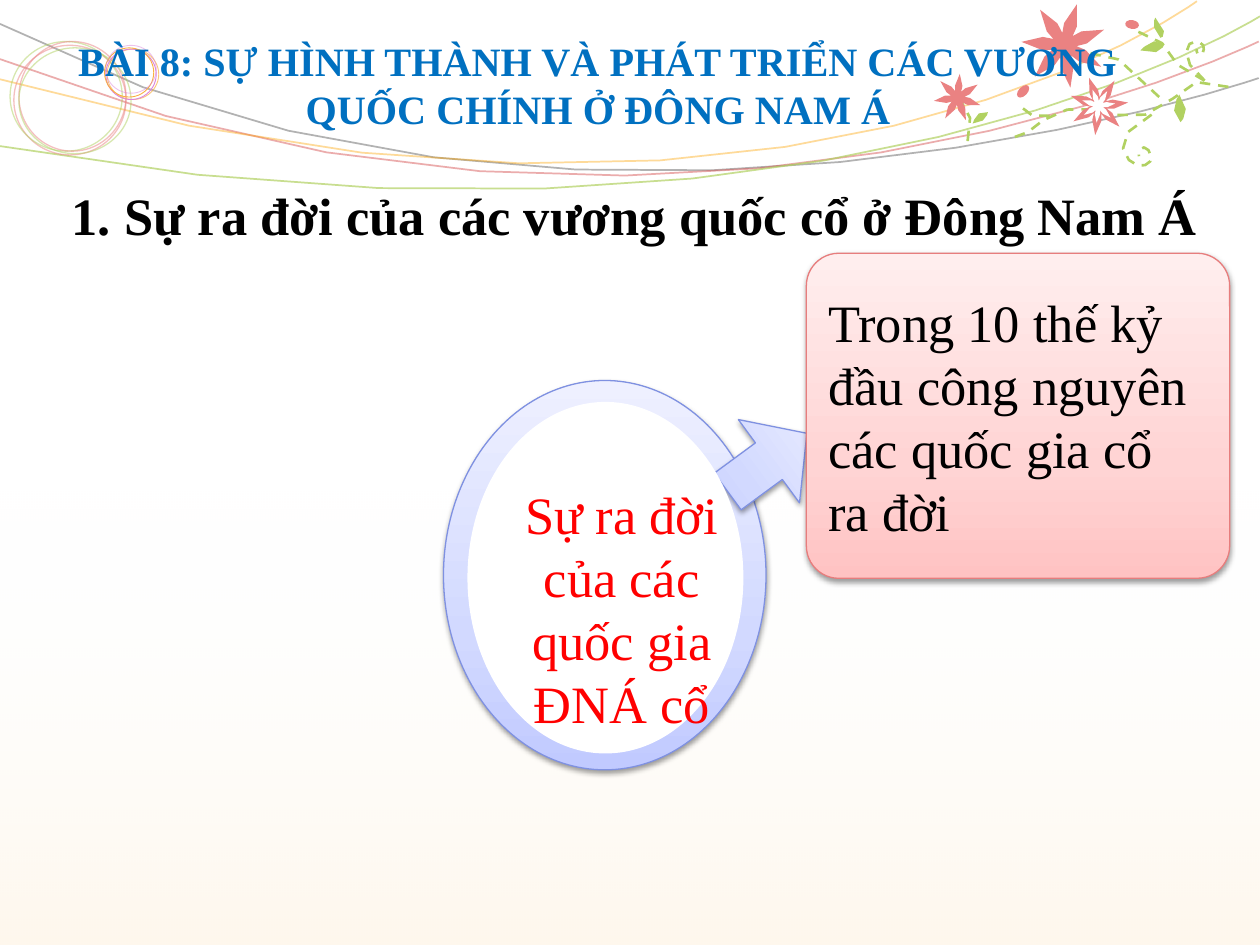
import math
import pptx
import pptx.util
import pptx.dml.color
import pptx.enum.dml
import pptx.enum.shapes
import pptx.enum.text
import pptx.oxml
import pptx.oxml.ns

COLORS = {
    "white": "FFFFFF", "black": "000000", "red": "FF0000", "title": "0070C0",
    "green": "B1D161", "coral": "EA8282", "rose": "D85A5A", "gray": "B2B2B2",
    "amber": "FEA300", "orange": "F9AF41", "violet": "DB85DB",
    "blue_edge": "7F91E1", "pink_edge": "E77D7D",
}
BLUE_STOPS = [(0, "C1CAFF", 100), (35, "D2D9FF", 100), (100, "EEF0FF", 100)]
PINK_STOPS = [(0, "FFC3C3", 100), (35, "FFD4D4", 100), (100, "FFEEEE", 100)]
UPWARD = '<a:lin ang="16200000" scaled="0"/>'
DOWNWARD = '<a:lin ang="5400000" scaled="0"/>'
FROM_CORNER = '<a:path path="rect"><a:fillToRect l="100000" b="100000"/></a:path>'
NS = 'xmlns:a="http://schemas.openxmlformats.org/drawingml/2006/main"'
SHAPE = pptx.enum.shapes.MSO_SHAPE
ALIGN = pptx.enum.text.PP_ALIGN
ANCHOR = pptx.enum.text.MSO_ANCHOR

deck = pptx.Presentation()
deck.slide_width = pptx.util.Inches(10)
deck.slide_height = pptx.util.Inches(7.5)
slide = deck.slides.add_slide(deck.slide_layouts[6])

# Grid of 100 columns by 75 rows
COL = deck.slide_width / 100
ROW = deck.slide_height / 75


def style(shape, fill=None, line=None, width=1, opacity=100, dashed=False,
          direction=UPWARD, shadow=False):
    """Fill is a colour name, a list of gradient stops, or None."""
    shape.shadow.inherit = False
    properties = shape._element.spPr
    if isinstance(fill, str):
        shape.fill.solid()
        shape.fill.fore_color.rgb = pptx.dml.color.RGBColor.from_string(COLORS[fill])
    else:
        shape.fill.background()
    if isinstance(fill, list):
        stops = "".join(
            f'<a:gs pos="{pos * 1000}"><a:srgbClr val="{color}">'
            f'<a:alpha val="{alpha * 1000}"/></a:srgbClr></a:gs>'
            for pos, color, alpha in fill)
        gradient = pptx.oxml.parse_xml(
            f'<a:gradFill {NS} rotWithShape="1"><a:gsLst>{stops}</a:gsLst>{direction}</a:gradFill>')
        properties.replace(properties.find(pptx.oxml.ns.qn("a:noFill")), gradient)
    if line:
        shape.line.width = pptx.util.Pt(width)
        shape.line.color.rgb = pptx.dml.color.RGBColor.from_string(COLORS[line])
        if dashed:
            shape.line.dash_style = pptx.enum.dml.MSO_LINE.DASH
        if opacity < 100:
            tint = shape.line._ln.find(".//" + pptx.oxml.ns.qn("a:srgbClr"))
            tint.append(pptx.oxml.parse_xml(f'<a:alpha {NS} val="{opacity * 1000}"/>'))
    else:
        shape.line.fill.background()
    if shadow:
        properties.find(pptx.oxml.ns.qn("a:effectLst")).append(pptx.oxml.parse_xml(
            f'<a:outerShdw {NS} blurRad="40000" dist="20000" dir="5400000" rotWithShape="0">'
            f'<a:srgbClr val="{COLORS["black"]}"><a:alpha val="38000"/></a:srgbClr></a:outerShdw>'))
    return shape


def draw_curve(knots, steps, closed=False, **look):
    """Knots are a start point, then three points for each cubic span."""
    trace = []
    for i in range(0, len(knots) - 1, 3):
        for step in range(1, steps + 1):
            t = step / steps
            weights = ((1 - t) ** 3, 3 * t * (1 - t) ** 2, 3 * t * t * (1 - t), t ** 3)
            span = list(zip(weights, knots[i:i + 4]))
            trace.append((round(sum(w * x for w, (x, y) in span) * COL),
                          round(sum(w * y for w, (x, y) in span) * ROW)))
    builder = slide.shapes.build_freeform(round(knots[0][0] * COL), round(knots[0][1] * ROW))
    builder.add_line_segments(trace, close=closed)
    return style(builder.convert_to_shape(), **look)


# Background washes
for top, wide, high, stops, direction in [
        (0, 80.8, 33.3, [(0, COLORS["green"], 20), (100, COLORS["white"], 0)], FROM_CORNER),
        (38.3, 100, 36.7, [(0, COLORS["white"], 0), (100, COLORS["orange"], 10)], DOWNWARD)]:
    wash = slide.shapes.add_shape(SHAPE.RECTANGLE, 0, round(top * ROW),
                                  round(wide * COL), round(high * ROW))
    style(wash, stops, direction=direction)
    if direction == FROM_CORNER:
        wash._element.spPr.xfrm.set("flipH", "1")

# Sweeping lines
for start, bend, end, color, opacity in [
        ((0, 1.9), (44.6, 25.4), (99.9, 6.2), "gray", 100),
        ((0, 4.7), (53.3, 26.3), (99.9, 3.3), "rose", 50),
        ((0, 6.3), (62.5, 24.4), (95, 0.1), "amber", 40),
        ((0, 11.6), (65.3, 23.4), (100, 1.3), "green", 70)]:
    draw_curve([start, bend, end, end], 12, line=color, opacity=opacity)

# Rings at the left
for left, top, wide, high, color, width, opacity in [
        (1.1, 3.6, 8.9, 8.7, "coral", 0.75, 50), (0.8, 3.3, 8.9, 8.7, "green", 0.75, 50),
        (1.5, 3.3, 8.5, 8.7, "coral", 0.75, 50), (1.5, 3.8, 8.9, 8.4, "green", 0.75, 50),
        (8.5, 3.9, 4.1, 4, "orange", 0.5, 70), (8.4, 3.9, 4, 4, "violet", 0.5, 100),
        (8.3, 3.8, 3.9, 3.9, "orange", 0.5, 100), (8.4, 3.6, 4, 3.8, "violet", 0.5, 50)]:
    ring = slide.shapes.add_shape(SHAPE.OVAL, round(left * COL), round(top * ROW),
                                  round(wide * COL), round(high * ROW))
    style(ring, line=color, width=width, opacity=opacity)

# Dashed stems
for stem in [
        [(76.8, 11.2), (77.7, 9), (76, 7.9), (76, 7.9)],
        [(97.5, 6.9), (94.3, 5.1), (93.6, 8.4), (90.9, 9.1), (88.2, 9.7), (87.3, 8.1),
         (84.7, 8.7), (82.2, 9.3), (81.9, 10.9), (80.2, 11)],
        [(95.6, 6.4), (93.9, 5.1), (94, 3.9), (94.4, 3.5), (94.9, 3.1), (95.3, 3.4),
         (95.5, 3.6), (95.6, 3.9), (95.5, 4.4), (95.2, 4.4), (95, 4.3), (94.9, 4), (95, 3.9)],
        [(95.6, 6.4), (92.5, 5.8), (93.1, 2.6), (90.3, 2.5)],
        [(83.3, 9.2), (81.6, 9.7), (80.9, 8.2), (80.9, 8.2)],
        [(92, 7.7), (89.3, 3.1), (84.2, 4.1), (84.2, 4.1)],
        [(91.4, 9.1), (88.6, 10.4), (88.9, 12.1), (89.6, 12.7), (90.3, 13.4), (91, 13.2),
         (91.3, 12.8), (91.5, 12.5), (91.2, 11.7), (90.8, 11.7), (90.4, 11.8), (90.3, 12.1),
         (90.4, 12.4)]]:
    draw_curve(stem, 3, line="green", width=1.5, dashed=True)

# Leaves: base, bend to the tip, bend back
for base, bend, tip, back in [
        ((77.2, 9.8), (78.3, 9.8), (78.4, 8.9), (77.5, 8.6)),
        ((92.1, 3), (91.2, 2.1), (91.7, 1.4), (93, 2.9)),
        ((92.4, 3.5), (91.7, 2.7), (90.5, 4), (92.2, 4.6)),
        ((93.6, 7.5), (94.7, 8.8), (93.7, 9.7), (92.6, 8.9))]:
    draw_curve([base, bend, tip, tip, back, base, base], 3, closed=True, fill="green")

# Buds
for left, top, wide, high, turn in [(80.6, 6.9, 1.2, 0.7, 133.8), (89.3, 1.6, 1.1, 0.7, 8.7)]:
    bud = slide.shapes.add_shape(SHAPE.OVAL, round(left * COL), round(top * ROW),
                                 round(wide * COL), round(high * ROW))
    bud.rotation = turn
    style(bud, "coral")

# Seven-petal flowers: each petal runs notch, bulge, tip, bulge, notch
PETALS = 7
for x, y, radius, turn, color in [
        (76, 7.76, 1.9, 121, "coral"), (87.2, 8.39, 2.35, 251, "coral"),
        (87.17, 8.39, 1.35, 250, "white"), (84.46, 3.59, 3.4, 133, "coral")]:
    outline = []
    for petal in range(PETALS):
        tip_angle = turn - petal * 360 / PETALS
        notch, bulge, tip, bulge_back, next_notch = [
            (x + share * radius * math.cos(math.radians(tip_angle + swing)),
             y + share * radius * math.sin(math.radians(tip_angle + swing)))
            for share, swing in [(0.29, 180 / PETALS), (0.72, 20), (1, 0),
                                 (0.68, -21), (0.29, -180 / PETALS)]]
        outline += ([] if outline else [notch]) + [notch, bulge, tip,
                                                   bulge_back, next_notch, next_notch]
    draw_curve(outline, 2, closed=True, fill=color)

# Diagram: outer oval, arrow, inner oval, callout
for kind, left, top, wide, high, turn, adjust, fill, edge in [
        (SHAPE.OVAL, 35.2, 30.2, 25.6, 30.9, 0, [], BLUE_STOPS, "blue_edge"),
        (SHAPE.UP_ARROW, 56.8, 32.8, 8.2, 7.8, 53.7, [0.44, 0.48], BLUE_STOPS, "blue_edge"),
        (SHAPE.OVAL, 37.1, 31.9, 21.9, 27.9, 0, [], "white", None),
        (SHAPE.ROUNDED_RECTANGLE, 64, 20.1, 33.6, 25.8, 0, [0.1], PINK_STOPS, "pink_edge")]:
    callout = slide.shapes.add_shape(kind, round(left * COL), round(top * ROW),
                                     round(wide * COL), round(high * ROW))
    callout.rotation = turn
    for i, value in enumerate(adjust):
        callout.adjustments[i] = value
    style(callout, fill, edge, 0.75, shadow=edge is not None)

# Texts: the callout, then the oval's label, the title and the heading
label, title, heading = [
    slide.shapes.add_textbox(round(left * COL), round(top * ROW), round(wide * COL), round(high * ROW))
    for left, top, wide, high in [(38.7, 37.8, 21.3, 21), (2.5, 1.7, 90, 10), (4.7, 14, 92.5, 6.7)]]
for holder, lines, size, color, bold, align, anchor in [
        (callout, ["Trong 10 thế kỷ", "đầu công nguyên", "các quốc gia cổ", "ra đời"],
         30, "black", False, ALIGN.JUSTIFY, ANCHOR.MIDDLE),
        (label, ["Sự ra đời của các quốc gia ĐNÁ cổ"], 30, "red", False, ALIGN.CENTER, ANCHOR.TOP),
        (title, ["BÀI 8: SỰ HÌNH THÀNH VÀ PHÁT TRIỂN CÁC VƯƠNG QUỐC CHÍNH Ở ĐÔNG NAM Á"],
         23, "title", True, ALIGN.CENTER, ANCHOR.MIDDLE),
        (heading, ["1. Sự ra đời của các vương quốc cổ ở Đông Nam Á"],
         30, "black", True, ALIGN.LEFT, ANCHOR.TOP)]:
    frame = holder.text_frame
    frame.word_wrap = True
    frame.vertical_anchor = anchor
    for i, line in enumerate(lines):
        paragraph = frame.add_paragraph() if i else frame.paragraphs[0]
        paragraph.alignment = align
        run = paragraph.add_run()
        run.text = line
        run.font.name = "Times New Roman"
        run.font.size = pptx.util.Pt(size)
        run.font.bold = bold
        run.font.color.rgb = pptx.dml.color.RGBColor.from_string(COLORS[color])

deck.save("out.pptx")
